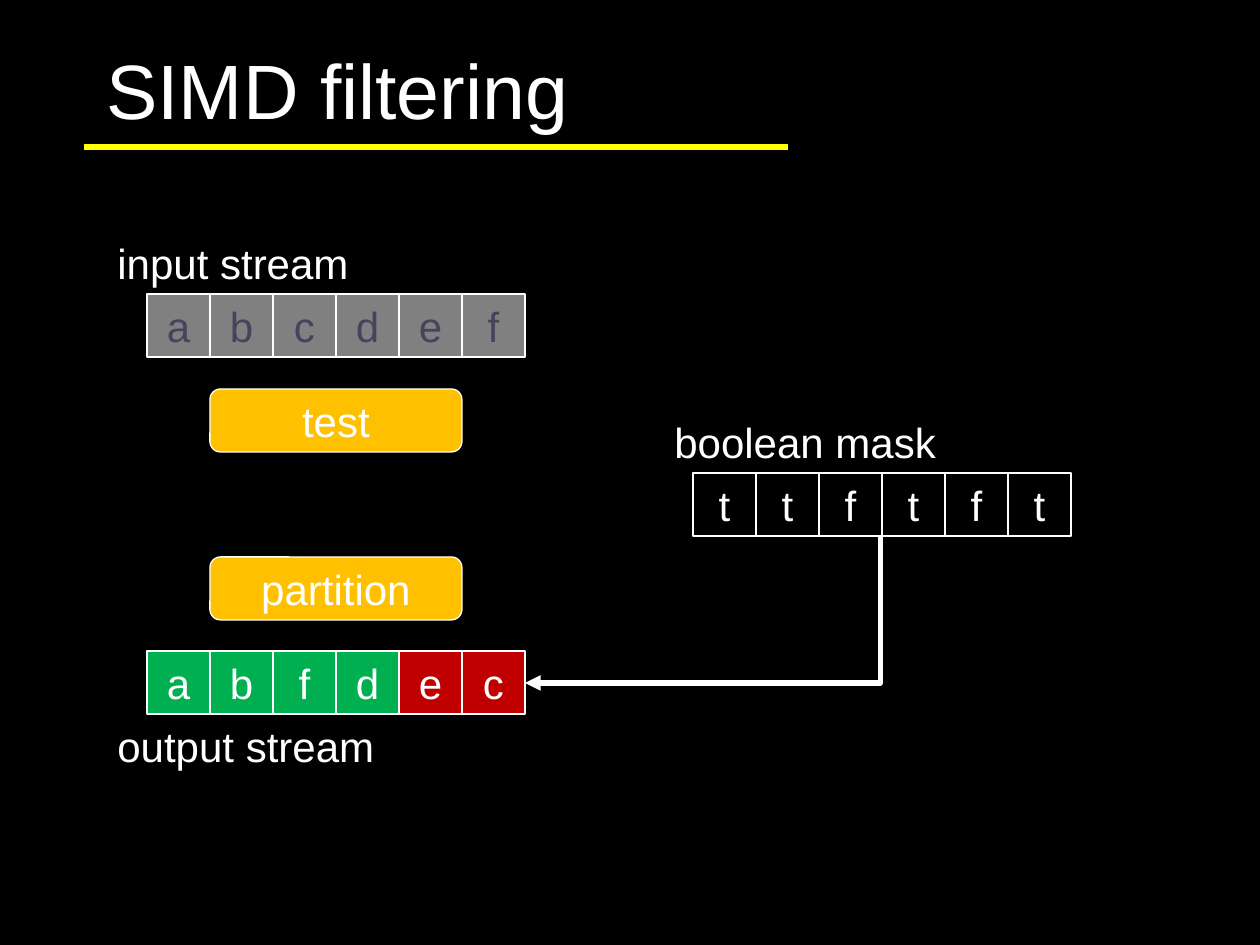
from dataclasses import dataclass

from lxml.etree import SubElement
from pptx import Presentation
from pptx.dml.color import RGBColor
from pptx.enum.shapes import MSO_CONNECTOR, MSO_SHAPE
from pptx.enum.text import MSO_ANCHOR, PP_ALIGN
from pptx.oxml.ns import qn
from pptx.util import Emu, Pt

EMU_PER_INCH = 914400
PX_PER_INCH = 126
CELL = 63
COLOURS = {
    "black": "000000",
    "white": "FFFFFF",
    "yellow": "FFFF00",
    "grey": "808080",
    "slate": "48435C",
    "amber": "FFC000",
    "green": "00B050",
    "red": "C00000",
}


@dataclass(frozen=True)
class Stream:
    left: int
    top: int
    letters: str
    fills: tuple[str, ...]
    ink: str = "white"


@dataclass(frozen=True)
class Label:
    text: str
    left: int
    top: int
    width: int
    height: int = CELL
    size: int = 24
    anchor: MSO_ANCHOR = MSO_ANCHOR.TOP
    wrap: bool = False


@dataclass(frozen=True)
class Step:
    text: str
    left: int
    top: int


STREAMS = (
    Stream(147, 294, "abcdef", ("grey",) * 6, "slate"),
    Stream(693, 473, "ttftft", ("black",) * 6),
    Stream(147, 651, "abfdec", ("green",) * 4 + ("red",) * 2),
)
LABELS = (
    Label("SIMD filtering", 94, 10, 1071, 157, 44, MSO_ANCHOR.MIDDLE, True),
    Label("input stream", 105, 231, 258),
    Label("boolean mask", 662, 410, 290),
    Label("output stream", 105, 714, 285),
)
STEPS = (Step("test", 210, 389), Step("partition", 210, 557))


def px(length: int) -> Emu:
    return Emu(round(length * EMU_PER_INCH / PX_PER_INCH))


def colour(name: str) -> RGBColor:
    return RGBColor.from_string(COLOURS[name])


def write(box, text: str, *, size: int = 24, ink: str = "white",
          align: PP_ALIGN = PP_ALIGN.LEFT,
          anchor: MSO_ANCHOR = MSO_ANCHOR.TOP, wrap: bool = True) -> None:
    frame = box.text_frame
    frame.word_wrap = wrap
    frame.vertical_anchor = anchor
    para = frame.paragraphs[0]
    para.alignment = align
    span = para.add_run()
    span.text = text
    span.font.name = "Arial"
    span.font.size = Pt(size)
    span.font.color.rgb = colour(ink)


def draw_box(page, kind: MSO_SHAPE, left: int, top: int, width: int, fill: str):
    box = page.shapes.add_shape(kind, px(left), px(top), px(width), px(CELL))
    box.shadow.inherit = False
    box.fill.solid()
    box.fill.fore_color.rgb = colour(fill)
    box.line.color.rgb = colour("white")
    box.line.width = Pt(0.75)
    return box


def draw_stream(page, stream: Stream) -> None:
    for index, (letter, fill) in enumerate(zip(stream.letters, stream.fills)):
        box = draw_box(page, MSO_SHAPE.RECTANGLE, stream.left + index * CELL,
                       stream.top, CELL, fill)
        write(box, letter, ink=stream.ink, align=PP_ALIGN.CENTER)


def draw_step(page, step: Step) -> None:
    box = draw_box(page, MSO_SHAPE.ROUNDED_RECTANGLE, step.left, step.top,
                   4 * CELL, "amber")
    write(box, step.text, align=PP_ALIGN.CENTER, anchor=MSO_ANCHOR.MIDDLE)


def draw_label(page, label: Label) -> None:
    box = page.shapes.add_textbox(px(label.left), px(label.top),
                                  px(label.width), px(label.height))
    write(box, label.text, size=label.size, anchor=label.anchor, wrap=label.wrap)


def draw_line(page, kind: MSO_CONNECTOR, start: tuple[int, int],
              end: tuple[int, int], ink: str):
    line = page.shapes.add_connector(kind, *map(px, start + end))
    line.line.color.rgb = colour(ink)
    line.line.width = Pt(3)
    SubElement(line._element.spPr, qn("a:effectLst"))
    return line


def draw_mask_arrow(page) -> None:
    arrow = draw_line(page, MSO_CONNECTOR.ELBOW, (882, 504), (525, 683), "white")
    properties = arrow._element.spPr
    guides = properties.find(qn("a:prstGeom")).find(qn("a:avLst"))
    SubElement(guides, qn("a:gd"), name="adj1", fmla="val 400")
    SubElement(properties.find(qn("a:ln")), qn("a:tailEnd"), type="triangle")


def main() -> None:
    deck = Presentation()
    deck.slide_width, deck.slide_height = px(1260), px(945)
    page = deck.slides.add_slide(deck.slide_layouts[6])
    page.background.fill.solid()
    page.background.fill.fore_color.rgb = colour("black")

    draw_mask_arrow(page)
    draw_line(page, MSO_CONNECTOR.STRAIGHT, (84, 147), (788, 147), "yellow")
    for stream in STREAMS:
        draw_stream(page, stream)
    for step in STEPS:
        draw_step(page, step)
    for label in LABELS:
        draw_label(page, label)
    deck.save("out.pptx")


if __name__ == "__main__":
    main()
